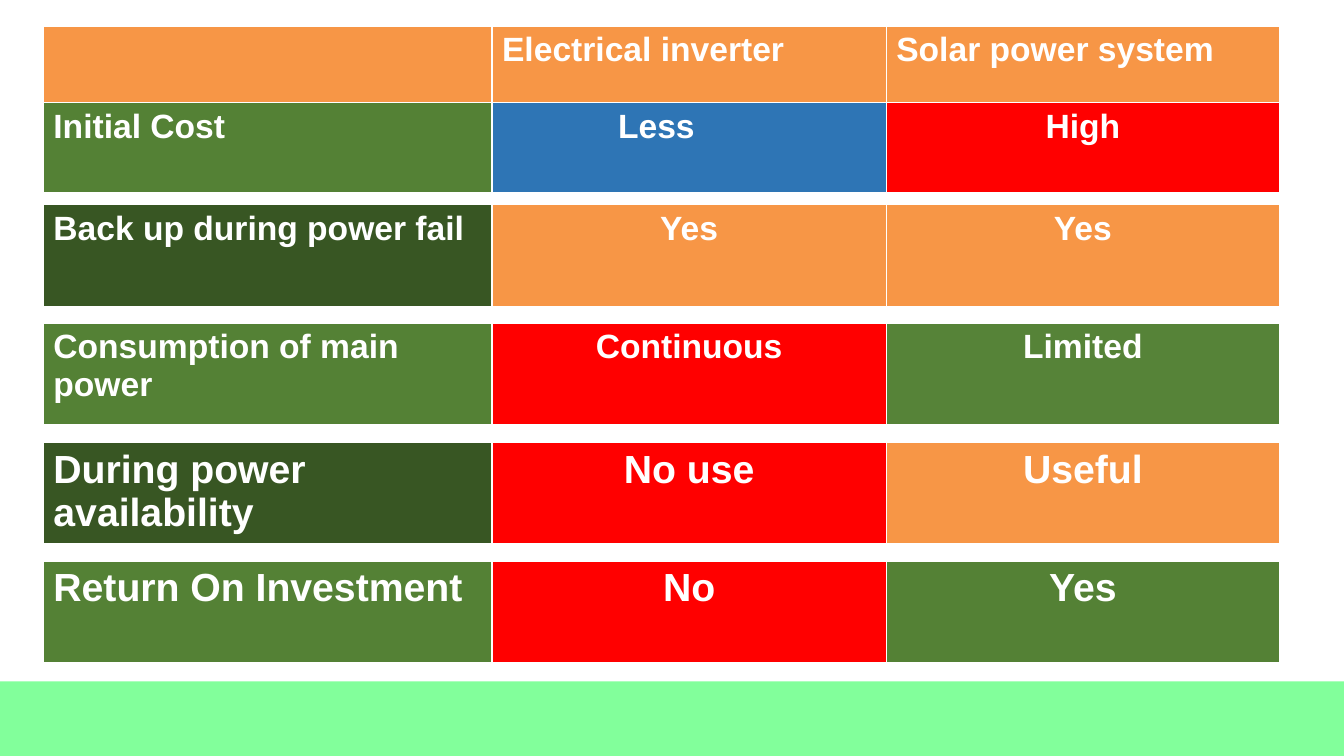
import dataclasses

import lxml.etree
import pptx
import pptx.dml.color
import pptx.enum.shapes
import pptx.enum.text
import pptx.oxml.ns
import pptx.util

SLIDE_WIDTH = 13.33
SLIDE_HEIGHT = 7.5
TABLE_LEFT = 0.43
COLUMN_WIDTHS = (4.45, 3.91, 3.9)
FIRST_GRID_TOP = 2.03
ROW_PITCH = 1.18
ROW_HEIGHT = 1.02
BORDERS = (("lnL", 1), ("lnR", 1), ("lnT", 1), ("lnB", 3))

WHITE = "FFFFFF"
ORANGE = "F79646"
GREEN = "548135"
SOFT_GREEN = "568338"
DARK_GREEN = "385623"
RED = "FF0000"
BLUE = "2E75B5"
MINT = "82FF9B"

LEFT = pptx.enum.text.PP_ALIGN.LEFT
CENTER = pptx.enum.text.PP_ALIGN.CENTER


@dataclasses.dataclass(frozen=True)
class Entry:
    text: str
    fill: str
    align: pptx.enum.text.PP_ALIGN = CENTER
    right_margin: float = 0.1


@dataclasses.dataclass(frozen=True)
class Comparison:
    top: float
    height: float
    entries: tuple[Entry, ...]
    size: int = 24


def grid_top(row: int) -> float:
    return FIRST_GRID_TOP + row * ROW_PITCH


COMPARISONS = (
    Comparison(0.26, 1.01, (
        Entry("", ORANGE, LEFT),
        Entry("Electrical inverter", ORANGE, LEFT),
        Entry("Solar power system", ORANGE, LEFT),
    )),
    Comparison(1.02, 0.9, (
        Entry("Initial Cost", GREEN, LEFT),
        Entry("Less", BLUE, right_margin=0.75),
        Entry("High", RED),
    )),
    Comparison(grid_top(0), ROW_HEIGHT, (
        Entry("Back up during power fail", DARK_GREEN, LEFT),
        Entry("Yes", ORANGE),
        Entry("Yes", ORANGE),
    )),
    Comparison(grid_top(1), ROW_HEIGHT, (
        Entry("Consumption of main power", GREEN, LEFT),
        Entry("Continuous", RED),
        Entry("Limited", SOFT_GREEN),
    )),
    Comparison(grid_top(2), ROW_HEIGHT, (
        Entry("During power availability", DARK_GREEN, LEFT),
        Entry("No use", RED),
        Entry("Useful", ORANGE),
    ), size=28),
    Comparison(grid_top(3), ROW_HEIGHT, (
        Entry("Return On Investment", GREEN, LEFT),
        Entry("No", RED),
        Entry("Yes", GREEN),
    ), size=28),
)


def color(value: str) -> pptx.dml.color.RGBColor:
    return pptx.dml.color.RGBColor.from_string(value)


def paint(target, value: str) -> None:
    target.fill.solid()
    target.fill.fore_color.rgb = color(value)


def write(frame, text: str, *, size: int, align, font: str = "Arial",
          ink: str = WHITE, bold: bool = True) -> None:
    para = frame.paragraphs[0]
    para.alignment = align
    span = para.add_run()
    span.text = text
    span.font.name = font
    span.font.size = pptx.util.Pt(size)
    span.font.bold = bold
    span.font.color.rgb = color(ink)


def add_borders(cell) -> None:
    properties = cell._tc.get_or_add_tcPr()
    qualified = pptx.oxml.ns.qn
    for position, (side, points) in enumerate(BORDERS):
        line = lxml.etree.Element(qualified(f"a:{side}"), w=str(pptx.util.Pt(points)))
        fill = lxml.etree.SubElement(line, qualified("a:solidFill"))
        lxml.etree.SubElement(fill, qualified("a:srgbClr"), val=WHITE)
        properties.insert(position, line)


def draw_comparison(page, comparison: Comparison) -> None:
    inches = pptx.util.Inches
    table = page.shapes.add_table(
        1, len(COLUMN_WIDTHS), inches(TABLE_LEFT), inches(comparison.top),
        inches(sum(COLUMN_WIDTHS)), inches(comparison.height)).table
    table.first_row = False
    table.horz_banding = False
    for column, width in zip(table.columns, COLUMN_WIDTHS):
        column.width = inches(width)
    for cell, entry in zip(table.rows[0].cells, comparison.entries):
        cell.margin_right = inches(entry.right_margin)
        paint(cell, entry.fill)
        add_borders(cell)
        if entry.text:
            write(cell.text_frame, entry.text, size=comparison.size, align=entry.align)


def draw_footer(page) -> None:
    top = 6.76
    band = page.shapes.add_shape(
        pptx.enum.shapes.MSO_SHAPE.RECTANGLE, 0, pptx.util.Inches(top),
        pptx.util.Inches(SLIDE_WIDTH), pptx.util.Inches(SLIDE_HEIGHT - top))
    band.shadow.inherit = False
    paint(band, MINT)
    band.line.fill.background()


def main() -> None:
    deck = pptx.Presentation()
    deck.slide_width = pptx.util.Inches(SLIDE_WIDTH)
    deck.slide_height = pptx.util.Inches(SLIDE_HEIGHT)
    page = deck.slides.add_slide(deck.slide_layouts[6])
    draw_footer(page)
    for comparison in COMPARISONS:
        draw_comparison(page, comparison)
    deck.save("out.pptx")


if __name__ == "__main__":
    main()
